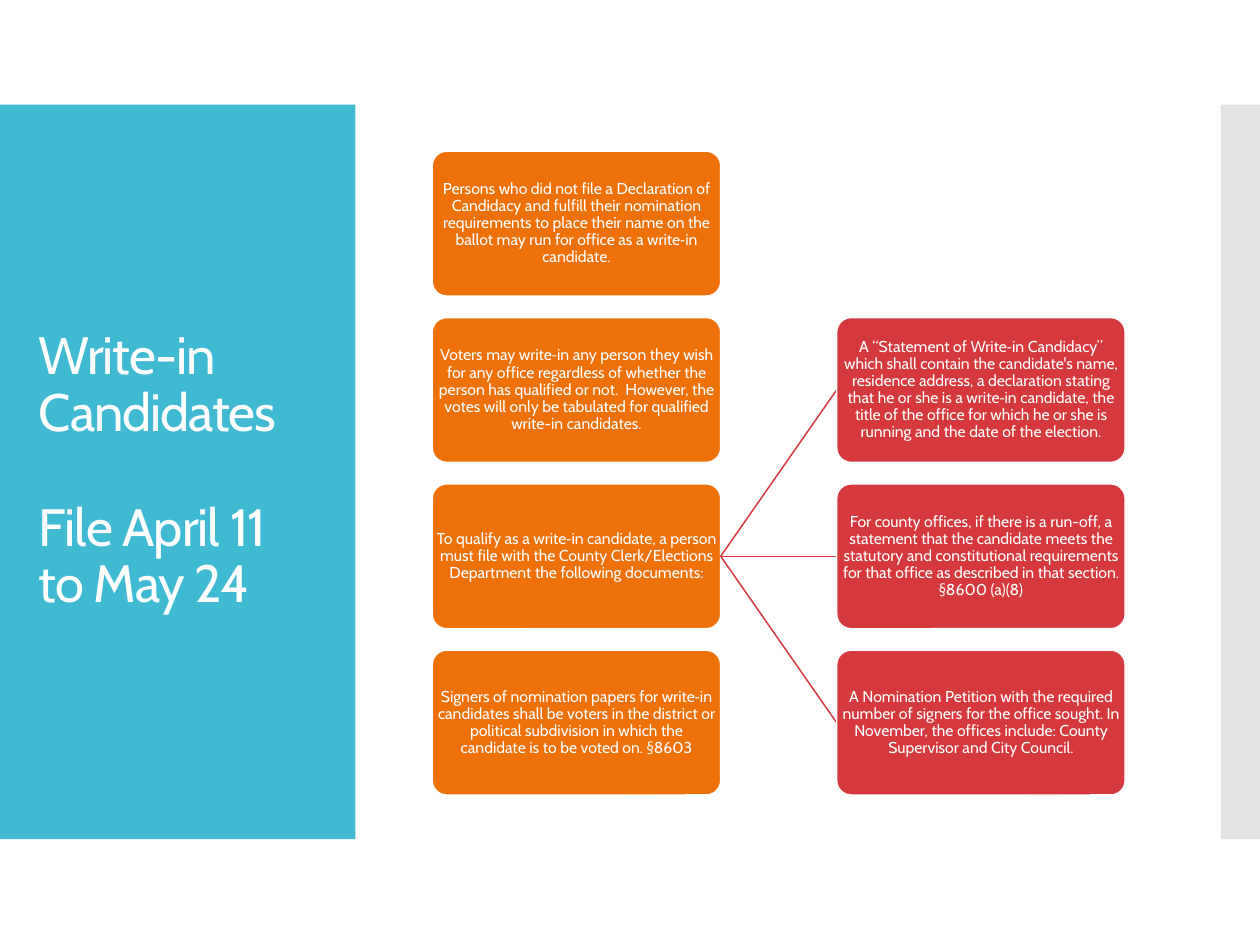
from dataclasses import dataclass

from lxml import etree
from pptx import Presentation
from pptx import util as u
from pptx.dml.color import RGBColor
from pptx.enum import shapes, text
from pptx.oxml.ns import qn


@dataclass(frozen=True)
class Theme:
    font: str = "Cabin"
    title_size: int = 30
    body_size: int = 9
    line_width: float = 0.85
    line_spacing: float = 0.9
    white: str = "FFFFFF"
    teal: str = "40BAD2"
    grey: str = "C8C8C8"
    orange: str = "EE7008"
    red: str = "D5393D"


@dataclass(frozen=True)
class Grid:
    """Box grid in inches: columns and rows counted from 0."""
    left: float = 3.43
    top: float = 1.2
    column_step: float = 3.21
    row_step: float = 1.32
    width: float = 2.29
    height: float = 1.15

    def corner(self, column, row):
        return self.left + column * self.column_step, self.top + row * self.row_step


class Page:
    def __init__(self, deck, theme, grid):
        self.theme, self.grid = theme, grid
        self.slide = deck.slides.add_slide(deck.slide_layouts[6])

    def _style(self, para, size):
        para.font.name = self.theme.font
        para.font.size = u.Pt(size)
        para.font.color.rgb = RGBColor.from_string(self.theme.white)
        para.line_spacing = self.theme.line_spacing

    def _shape(self, kind, place, color):
        shape = self.slide.shapes.add_shape(kind, *map(u.Inches, place))
        shape.shadow.inherit = False
        shape.fill.solid()
        shape.fill.fore_color.rgb = RGBColor.from_string(color)
        return shape

    def band(self, left, width, color, opacity=100):
        shape = self._shape(shapes.MSO_SHAPE.RECTANGLE, (left, 0.83, width, 5.83), color)
        shape.line.fill.background()
        if opacity < 100:
            fill = shape.fill.fore_color._xFill.find(qn("a:srgbClr"))
            etree.SubElement(fill, qn("a:alpha"), val=str(opacity * 1000))

    def title(self, paragraphs):
        box = self.slide.shapes.add_textbox(*map(u.Inches, (0.21, 1.86, 2.42, 3.77)))
        frame = box.text_frame
        frame.word_wrap = True
        frame.vertical_anchor = text.MSO_ANCHOR.MIDDLE
        for index, words in enumerate(paragraphs):
            para = frame.add_paragraph() if index else frame.paragraphs[0]
            self._style(para, self.theme.title_size)
            if index:
                para.space_before = u.Pt(33)
            span = para.add_run()
            span.text = words
            span.font._element.set("spc", "-60")

    def card(self, column, row, color, words):
        place = (*self.grid.corner(column, row), self.grid.width, self.grid.height)
        box = self._shape(shapes.MSO_SHAPE.ROUNDED_RECTANGLE, place, color)
        box.adjustments[0] = 0.1
        box.line.color.rgb = RGBColor.from_string(self.theme.white)
        box.line.width = u.Pt(self.theme.line_width)
        frame = box.text_frame
        frame.word_wrap = True
        frame.vertical_anchor = text.MSO_ANCHOR.MIDDLE
        frame.margin_left = frame.margin_right = 0
        frame.margin_top = frame.margin_bottom = u.Inches(0.01)
        para = frame.paragraphs[0]
        para.text = words
        para.alignment = text.PP_ALIGN.CENTER
        self._style(para, self.theme.body_size)

    def branch(self, from_row, to_row):
        """Line from a first-column card to a second-column card."""
        middle = self.grid.height / 2
        left, start = self.grid.corner(0, from_row)
        right, end = self.grid.corner(1, to_row)
        ends = (left + self.grid.width, start + middle, right, end + middle)
        line = self.slide.shapes.add_connector(
            shapes.MSO_CONNECTOR.STRAIGHT, *map(u.Inches, ends))
        line.line.color.rgb = RGBColor.from_string(self.theme.red)
        line.line.width = u.Pt(self.theme.line_width)
        etree.SubElement(line._element.spPr, qn("a:effectLst"))


STATEMENTS = [
    "Persons who did not file a Declaration of Candidacy and fulfill their nomination "
    "requirements to place their name on the ballot may run for office as a write‑in candidate.",
    "Voters may write‑in any person they wish for any office regardless of whether the person "
    "has qualified or not.  However, the votes will only be tabulated for qualified "
    "write-in candidates.",
    "To qualify as a write‑in candidate, a person must file with the County Clerk/Elections "
    "Department the following documents:",
    "Signers of nomination papers for write‑in candidates shall be voters in the district or "
    "political subdivision in which the candidate is to be voted on. §8603",
]
DOCUMENTS = [
    "A “Statement of Write‑in Candidacy” which shall contain the candidate's name, residence "
    "address, a declaration stating that he or she is a write‑in candidate, the title of the "
    "office for which he or she is running and the date of the election.",
    "For county offices, if there is a run-off, a statement that the candidate meets the "
    "statutory and constitutional requirements for that office as described in that section. "
    "§8600 (a)(8)",
    "A Nomination Petition with the required number of signers for the office sought. "
    "In November, the offices include: County Supervisor and City Council.",
]


def main():
    deck = Presentation()
    deck.slide_width, deck.slide_height = u.Inches(10), u.Inches(7.5)
    theme = Theme()
    page = Page(deck, theme, Grid())

    # Side bands and title
    page.band(0, 2.82, theme.teal)
    page.band(9.69, 0.31, theme.grey, opacity=50)
    page.title(["Write-in Candidates", "File April 11 to May 24"])

    # Statements in the first column
    for row, words in enumerate(STATEMENTS):
        page.card(0, row, theme.orange, words)

    # Required documents, branching from the third statement
    for row, words in enumerate(DOCUMENTS, start=1):
        page.branch(2, row)
        page.card(1, row, theme.red, words)

    deck.save("out.pptx")


if __name__ == "__main__":
    main()
